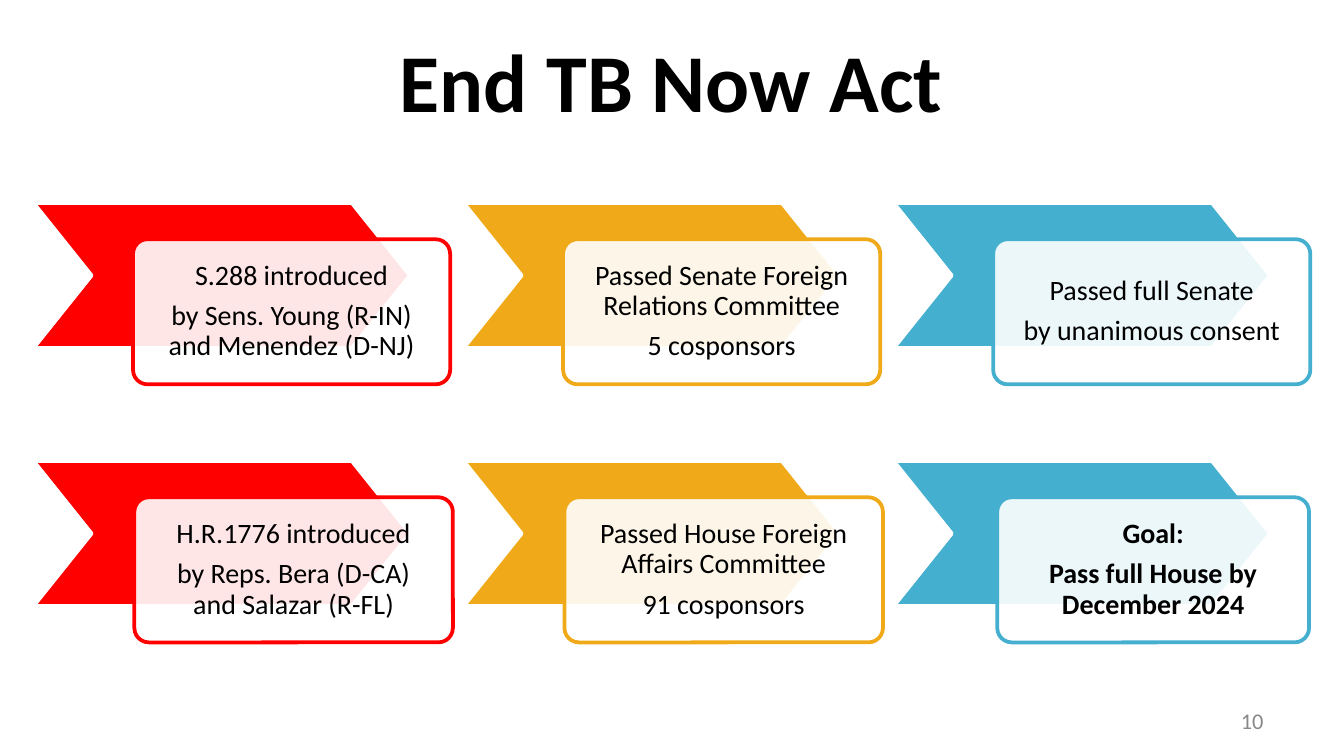
import pptx
import pptx.util
import pptx.dml.color
import pptx.enum.shapes
import pptx.enum.text
import pptx.oxml.ns
from lxml import etree

Inches = pptx.util.Inches
Pt = pptx.util.Pt
ALIGN = pptx.enum.text.PP_ALIGN
SHAPE = pptx.enum.shapes.MSO_SHAPE

COLORS = {
    "introduced": "FF0000",
    "committee": "F0AA19",
    "chamber": "45AFD0",
    "text": "000000",
    "number": "888888",
    "white": "FFFFFF",
}
STAGES = ["introduced", "committee", "chamber"]
SENATE = [
    ["S.288 introduced", "by Sens. Young (R-IN) and Menendez (D-NJ)"],
    ["Passed Senate Foreign Relations Committee", "5 cosponsors"],
    ["Passed full Senate", "by unanimous consent"],
]
HOUSE = [
    ["H.R.1776 introduced", "by Reps. Bera (D-CA) and Salazar (R-FL)"],
    ["Passed House Foreign Affairs Committee", "91 cosponsors"],
    ["Goal:", "Pass full House by December 2024"],
]
SLIDE_WIDTH = 10
LEFT, STAGE_STEP = 0.25, 3.2


def rgb(name):
    return pptx.dml.color.RGBColor.from_string(COLORS[name])


def write(frame, lines, size, color="text", bold=False, align=ALIGN.CENTER,
          spacing=1.0, gap=0, inset=(0.1, 0.05)):
    """Fill a text frame, one paragraph a line, with gap points between them."""
    frame.word_wrap = True
    frame.auto_size = pptx.enum.text.MSO_AUTO_SIZE.NONE
    frame.vertical_anchor = pptx.enum.text.MSO_ANCHOR.MIDDLE
    frame.margin_left = frame.margin_right = Inches(inset[0])
    frame.margin_top = frame.margin_bottom = Inches(inset[1])
    for index, line in enumerate(lines):
        paragraph = frame.add_paragraph() if index else frame.paragraphs[0]
        paragraph.text = line
        paragraph.alignment = align
        paragraph.line_spacing = spacing
        paragraph.space_before = Pt(gap if index else 0)
        font = paragraph.font
        font.name, font.size, font.bold = "Calibri", Pt(size), bold
        font.color.rgb = rgb(color)


class BillSlide:
    def __init__(self, deck):
        self.slide = deck.slides.add_slide(deck.slide_layouts[5])

    def title(self, text):
        title = self.slide.shapes.title
        title.left, title.top = Inches(0.95), Inches(0.12)
        title.width, title.height = Inches(8.09), Inches(0.94)
        write(title.text_frame, [text], 44, bold=True)

    def number(self, text):
        box = self.slide.shapes.add_textbox(
            Inches(7.17), Inches(5.21), Inches(2.33), Inches(0.3))
        write(box.text_frame, [text], 12, color="number", align=ALIGN.RIGHT)

    def outlined(self, shapes, kind, box, adjustment, fill, line):
        shape = shapes.add_shape(kind, *[Inches(length) for length in box])
        shape.shadow.inherit = False
        shape.adjustments[0] = adjustment
        shape.fill.solid()
        shape.fill.fore_color.rgb = rgb(fill)
        shape.line.color.rgb = rgb(line)
        shape.line.width = Pt(2)
        return shape

    def chevron(self, shapes, left, top, stage):
        self.outlined(shapes, SHAPE.CHEVRON, (left, top, 2.8, 1.08), 0.4,
                      stage, "white")

    def card(self, shapes, left, top, width, stage, lines, bold):
        card = self.outlined(shapes, SHAPE.ROUNDED_RECTANGLE,
                             (left, top, width, 1.08), 0.1, "white", stage)
        qn = pptx.oxml.ns.qn
        white = card.fill._xPr.find(qn("a:solidFill")).find(qn("a:srgbClr"))
        etree.SubElement(white, qn("a:alpha"), val="90000")
        write(card.text_frame, lines, 15, bold=bold, spacing=0.9, gap=5.25,
              inset=(0.12, 0.12))

    def process(self, top, steps, card_shift, card_width):
        shapes = self.slide.shapes.add_group_shape().shapes
        for index, (stage, lines) in enumerate(zip(STAGES, steps)):
            left = LEFT + index * STAGE_STEP
            is_goal = lines[0] == "Goal:"
            self.chevron(shapes, left, top, stage)
            self.card(shapes, left + (0.77 if is_goal else card_shift),
                      top + 0.27, 2.32 if is_goal else card_width,
                      stage, lines, is_goal)


def main():
    deck = pptx.Presentation()
    deck.slide_width = Inches(SLIDE_WIDTH)
    deck.slide_height = Inches(SLIDE_WIDTH * 9 / 16)
    bill = BillSlide(deck)
    bill.title("End TB Now Act")
    bill.process(1.51, SENATE, card_shift=0.74, card_width=2.36)
    bill.process(3.43, HOUSE, card_shift=0.75, card_width=2.37)
    bill.number("10")
    deck.save("out.pptx")


if __name__ == "__main__":
    main()
